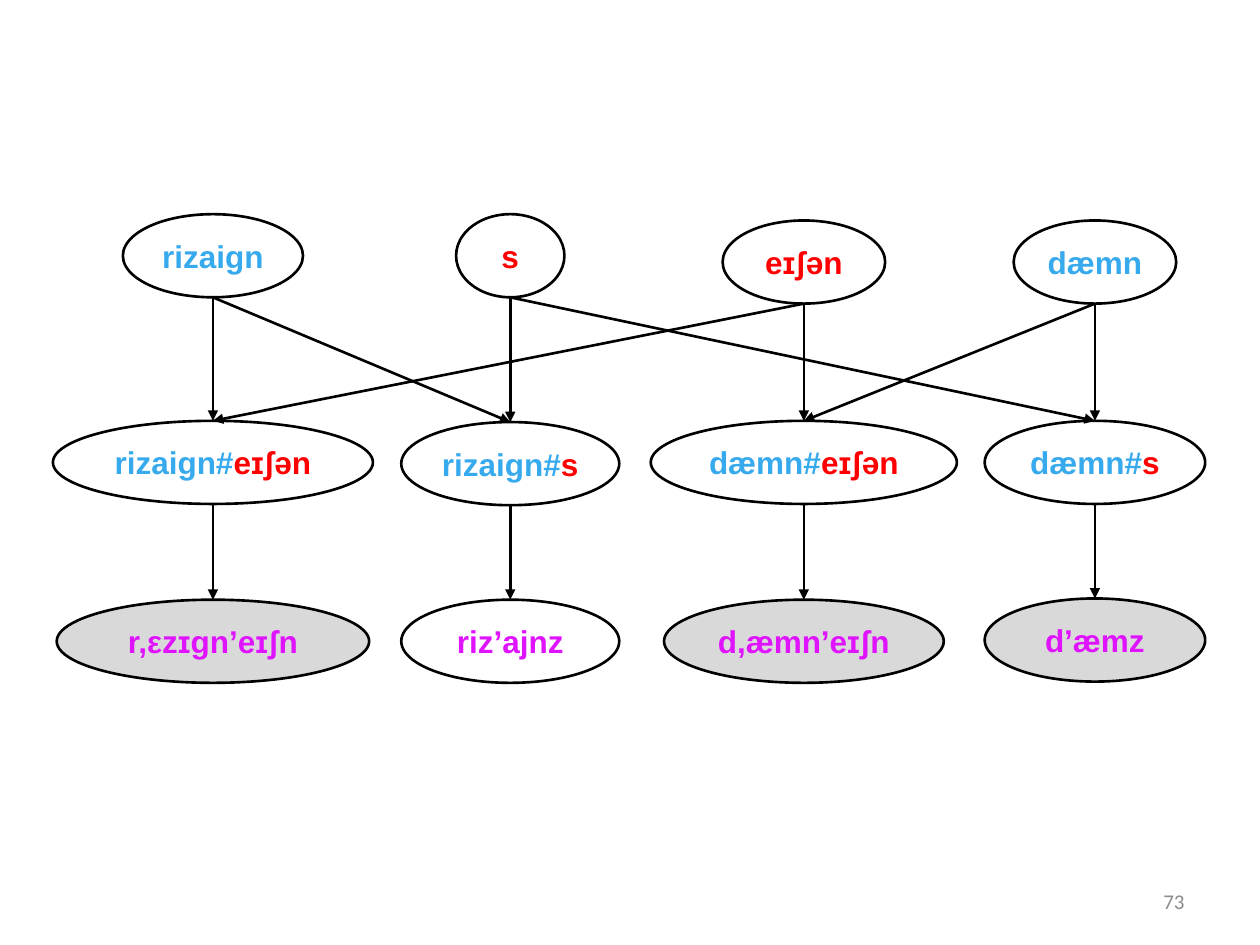
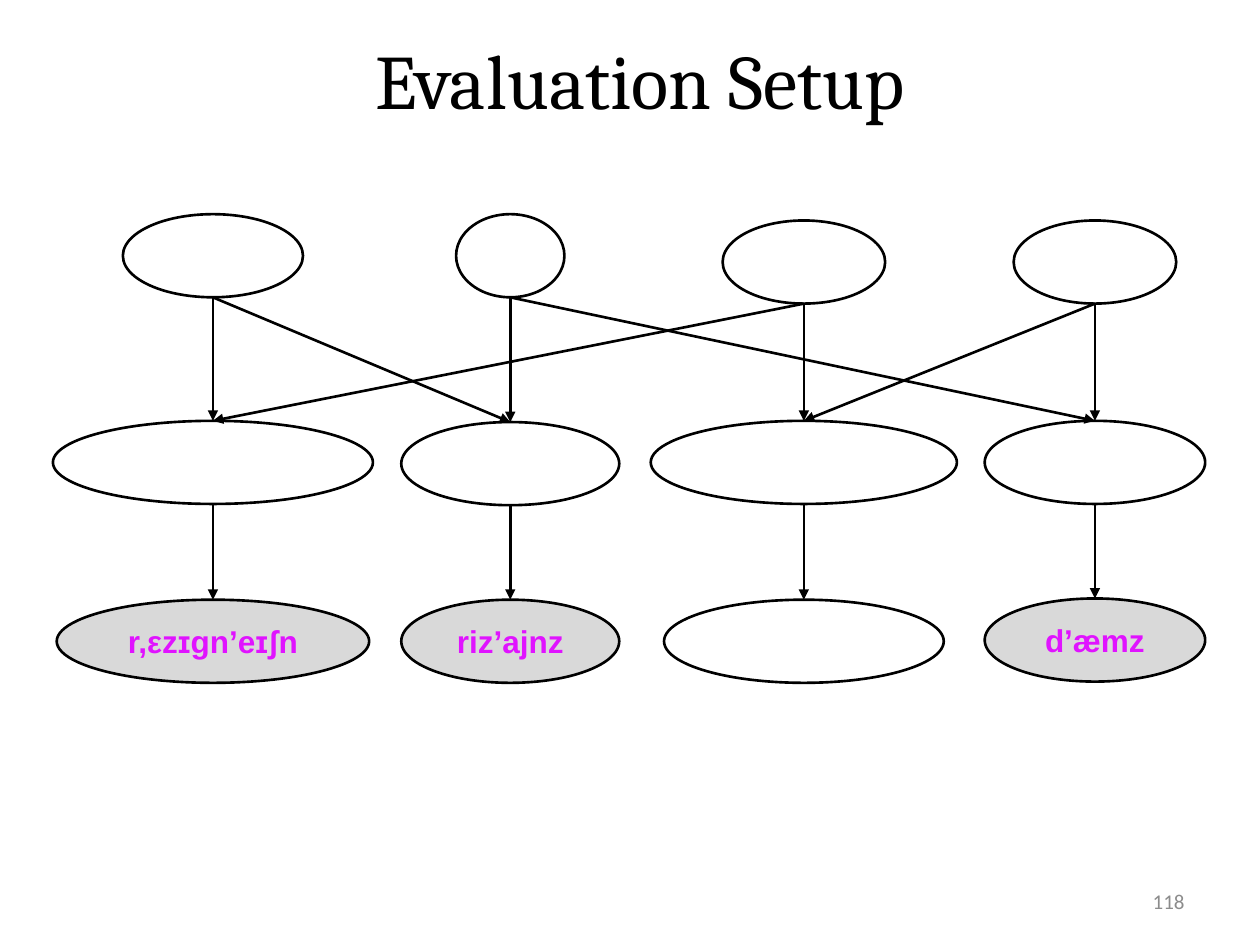
from dataclasses import dataclass

import pptx
import pptx.dml.color
import pptx.enum.shapes
import pptx.enum.text
import pptx.oxml
import pptx.oxml.ns
import pptx.util

# Content: words are lists of (text, role) parts, one per column
MORPHEMES = [[("rizaign", "stem")], [("s", "suffix")],
             [("eɪʃən", "suffix")], [("dæmn", "stem")]]
UNDERLYING = [[("rizaign#", "stem"), ("eɪʃən", "suffix")],
              [("rizaign#", "stem"), ("s", "suffix")],
              [("dæmn#", "stem"), ("eɪʃən", "suffix")],
              [("dæmn#", "stem"), ("s", "suffix")]]
SURFACE = [[("r,εzɪgn’eɪʃn", "surface")], [("riz’ajnz", "surface")],
           [("d,æmn’eɪʃn", "surface")], [("d’æmz", "surface")]]
ROWS = [MORPHEMES, UNDERLYING, SURFACE]

# Which morpheme columns feed each underlying form
SOURCES = [(0, 2), (0, 1), (2, 3), (3, 1)]

# observed: surface columns drawn shaded; reveal: words of hidden nodes shown
SLIDES = [
    {"title": None, "number": "73", "observed": {0, 2, 3}, "reveal": True},
    {"title": "Evaluation Setup", "number": "118", "observed": {0, 1, 3}, "reveal": False},
]

# Grid, in inches
WIDTH, HEIGHT = 10, 7.5
COLUMN_CENTERS = [1.69, 4.05, 6.38, 8.69]
ROW_TOPS = [[1.7, 1.7, 1.75, 1.75], [3.34, 3.35, 3.34, 3.34], [4.76, 4.76, 4.76, 4.75]]
NODE_WIDTHS = [[1.43, 0.86, 1.29, 1.29], [2.54, 1.73, 2.43, 1.75], [2.48, 1.73, 2.22, 1.75]]
NODE_HEIGHT = 0.66
NODE_INSET = 0.03
TITLE_BOX = (0.58, 0, 9, 1.25)
NUMBER_BOX = (7.17, 6.95, 2.33, 0.4)
ELLIPSE_TOP, ELLIPSE_BOTTOM = 0, 4


@dataclass(frozen=True)
class Theme:
    ink: str = "000000"
    paper: str = "FFFFFF"
    shade: str = "D9D9D9"
    muted: str = "8C8C8C"
    stem: str = "37AAED"
    suffix: str = "FF0000"
    surface: str = "E013FF"
    node_font: str = "Arial"
    title_font: str = "Cambria"
    number_font: str = "Calibri"
    node_size: int = 18
    title_size: int = 44
    number_size: int = 12
    line_width: float = 1.5


THEME = Theme()
ALIGN = pptx.enum.text.PP_ALIGN


def rgb(value):
    return pptx.dml.color.RGBColor.from_string(value)


def inches(*values):
    return [pptx.util.Inches(v) for v in values]


def style_paragraph(p, font, size, align, bold=False):
    p.alignment = align
    p.font.name = font
    p.font.size = pptx.util.Pt(size)
    p.font.bold = bold


def add_label(s, box, text, font, size, color, align):
    tf = s.shapes.add_textbox(*inches(*box)).text_frame
    tf.word_wrap = True
    tf.vertical_anchor = pptx.enum.text.MSO_ANCHOR.MIDDLE
    p = tf.paragraphs[0]
    p.text = text
    style_paragraph(p, font, size, align)
    p.font.color.rgb = rgb(color)


def add_node(s, row, col, word, shaded):
    width = NODE_WIDTHS[row][col]
    sp = s.shapes.add_shape(
        pptx.enum.shapes.MSO_SHAPE.OVAL,
        *inches(COLUMN_CENTERS[col] - width / 2, ROW_TOPS[row][col], width, NODE_HEIGHT))
    sp.shadow.inherit = False
    sp.fill.solid()
    sp.fill.fore_color.rgb = rgb(THEME.shade if shaded else THEME.paper)
    sp.line.color.rgb = rgb(THEME.ink)
    sp.line.width = pptx.util.Pt(THEME.line_width)
    if word:
        tf = sp.text_frame
        tf.word_wrap = True
        tf.vertical_anchor = pptx.enum.text.MSO_ANCHOR.MIDDLE
        inset = pptx.util.Inches(NODE_INSET)
        tf.margin_left = tf.margin_right = tf.margin_top = tf.margin_bottom = inset
        p = tf.paragraphs[0]
        style_paragraph(p, THEME.node_font, THEME.node_size, ALIGN.CENTER, bold=True)
        for text, role in word:
            r = p.add_run()
            r.text = text
            r.font.color.rgb = rgb(getattr(THEME, role))
    return sp


def add_arrow(s, source, target):
    """Arrow from the bottom of one ellipse to the top of another."""
    cx = s.shapes.add_connector(pptx.enum.shapes.MSO_CONNECTOR.STRAIGHT, 0, 0, 0, 0)
    # begin_connect only knows four sites; an ellipse has eight
    cx.begin_connect(source, ELLIPSE_TOP)
    cx.begin_y = source.top + source.height
    cx.element.xpath(".//a:stCxn")[0].set("idx", str(ELLIPSE_BOTTOM))
    cx.end_connect(target, ELLIPSE_TOP)
    cx.line.color.rgb = rgb(THEME.ink)
    cx.line.width = pptx.util.Pt(THEME.line_width)
    ns = pptx.oxml.ns.nsdecls("a")
    cx.line._get_or_add_ln().append(pptx.oxml.parse_xml(f'<a:tailEnd {ns} type="triangle"/>'))
    cx.element.spPr.append(pptx.oxml.parse_xml(f"<a:effectLst {ns}/>"))


def add_network(s, observed, reveal):
    nodes = []
    for row, words in enumerate(ROWS):
        nodes.append([])
        for col, word in enumerate(words):
            shaded = words is SURFACE and col in observed
            nodes[row].append(add_node(s, row, col, word if shaded or reveal else None, shaded))
    morphemes, underlying, surface = nodes
    for col, sources in enumerate(SOURCES):
        for source in sources:
            add_arrow(s, morphemes[source], underlying[col])
        add_arrow(s, underlying[col], surface[col])


def main():
    prs = pptx.Presentation()
    prs.slide_width, prs.slide_height = inches(WIDTH, HEIGHT)
    for content in SLIDES:
        s = prs.slides.add_slide(prs.slide_layouts[6])
        if content["title"]:
            add_label(s, TITLE_BOX, content["title"], THEME.title_font,
                      THEME.title_size, THEME.ink, ALIGN.CENTER)
        add_network(s, content["observed"], content["reveal"])
        add_label(s, NUMBER_BOX, content["number"], THEME.number_font,
                  THEME.number_size, THEME.muted, ALIGN.RIGHT)
    prs.save("out.pptx")


if __name__ == "__main__":
    main()
